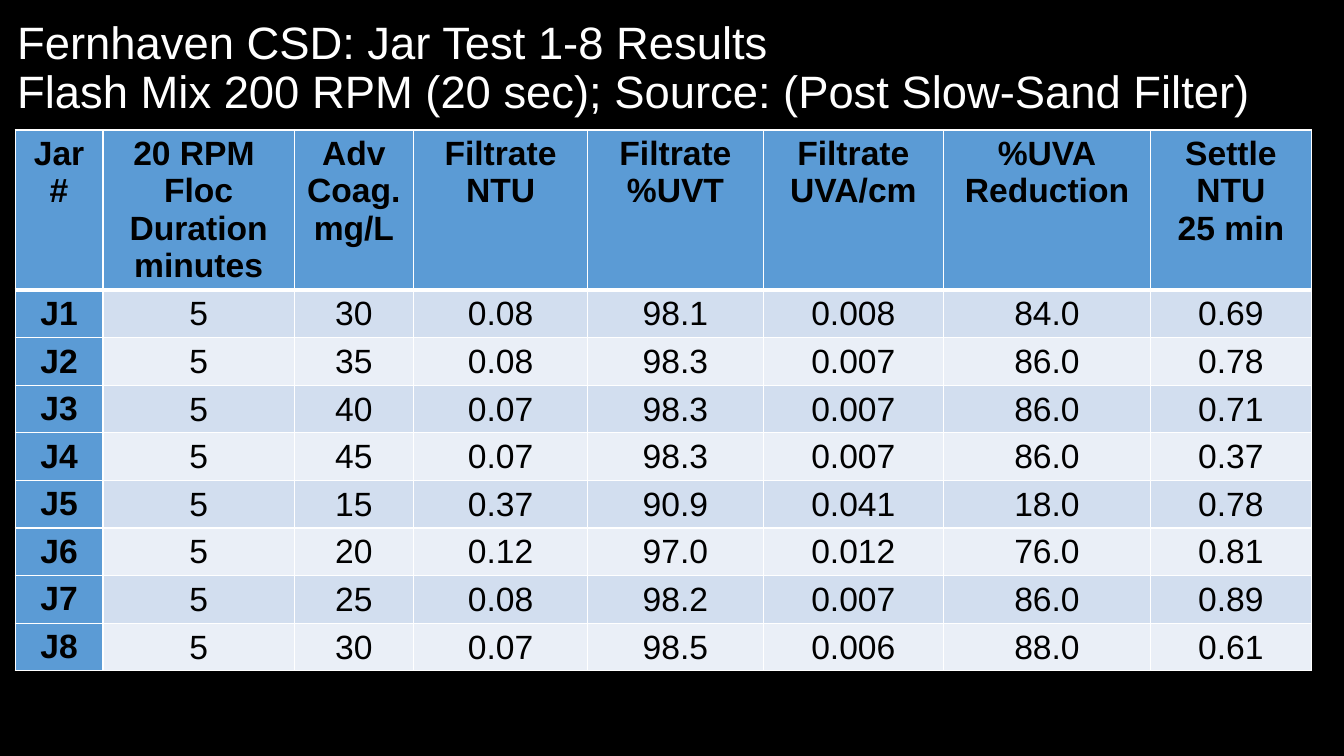
from lxml import etree
from pptx import Presentation
from pptx.dml.color import RGBColor
from pptx.enum.text import MSO_ANCHOR, MSO_AUTO_SIZE, PP_ALIGN
from pptx.oxml.ns import qn
from pptx.util import Inches, Pt

LEFT, CENTER = PP_ALIGN.LEFT, PP_ALIGN.CENTER
TOP, MIDDLE = MSO_ANCHOR.TOP, MSO_ANCHOR.MIDDLE
NO_AUTOFIT = MSO_AUTO_SIZE.NONE
TITLE_ONLY = 5

COLORS = {
    "background": "000000",
    "title": "FFFFFF",
    "text": "000000",
    "border": "FFFFFF",
    "header": "5B9BD5",
    "odd_row": "D2DEEF",
    "even_row": "EAEFF7",
}

TITLE = ("Fernhaven CSD: Jar Test 1-8 Results \v"
         "Flash Mix 200 RPM (20 sec); Source: (Post Slow-Sand Filter)")

HEADINGS = [
    "Jar\n#", "20 RPM \nFloc\nDuration\nminutes", "Adv\nCoag.\nmg/L",
    "Filtrate\nNTU", "Filtrate\n%UVT", "Filtrate\nUVA/cm",
    "%UVA\nReduction", "Settle\nNTU\n25 min",
]
JAR_RESULTS = [
    ["J1", "5", "30", "0.08", "98.1", "0.008", "84.0", "0.69"],
    ["J2", "5", "35", "0.08", "98.3", "0.007", "86.0", "0.78"],
    ["J3", "5", "40", "0.07", "98.3", "0.007", "86.0", "0.71"],
    ["J4", "5", "45", "0.07", "98.3", "0.007", "86.0", "0.37"],
    ["J5", "5", "15", "0.37", "90.9", "0.041", "18.0", "0.78"],
    ["J6", "5", "20", "0.12", "97.0", "0.012", "76.0", "0.81"],
    ["J7", "5", "25", "0.08", "98.2", "0.007", "86.0", "0.89"],
    ["J8", "5", "30", "0.07", "98.5", "0.006", "88.0", "0.61"],
]

# Percent of the slide's width and height
COLUMN_WIDTHS = [6.53, 14.25, 8.85, 12.98, 13.05, 13.43, 15.38, 12]
HEADER_HEIGHT, JAR_HEIGHT = 13.87, 5.87


def write_text(frame, text, size=24, color="text", bold=False, align=CENTER,
               spacing=None, font="Arial"):
    """Fill the frame with one formatted paragraph per line of text."""
    frame.text = text
    for para in frame.paragraphs:
        para.alignment = align
        para.line_spacing = spacing
        for span in para.runs:
            span.font.name = font
            span.font.size = Pt(size)
            span.font.bold = bold
            span.font.color.rgb = RGBColor.from_string(COLORS[color])


def set_borders(cell, top=1, bottom=1):
    """Draw the four cell borders, widths in points."""
    properties = cell._tc.get_or_add_tcPr()
    widths = {"a:lnL": 1, "a:lnR": 1, "a:lnT": top, "a:lnB": bottom}
    for index, (tag, width) in enumerate(widths.items()):
        line = etree.Element(qn(tag), w=str(Pt(width)))
        fill = etree.SubElement(line, qn("a:solidFill"))
        etree.SubElement(fill, qn("a:srgbClr"), val=COLORS["border"])
        properties.insert(index, line)


class SlideBuilder:
    """Holds the deck and its current page; lengths are percent of the slide."""

    def __init__(self, width, height):
        self.deck = Presentation()
        self.deck.slide_width = Inches(width)
        self.deck.slide_height = Inches(height)
        self.page = self.deck.slides.add_slide(self.deck.slide_layouts[TITLE_ONLY])
        background = self.page.background.fill
        background.solid()
        background.fore_color.rgb = RGBColor.from_string(COLORS["background"])

    def across(self, percent):
        return round(self.deck.slide_width * percent / 100)

    def down(self, percent):
        return round(self.deck.slide_height * percent / 100)

    def title(self, text, left, top, width, height):
        box = self.page.shapes.title
        box.left, box.top = self.across(left), self.down(top)
        box.width, box.height = self.across(width), self.down(height)
        frame = box.text_frame
        frame.word_wrap = True
        frame.auto_size = NO_AUTOFIT
        frame.vertical_anchor = MIDDLE
        write_text(frame, text, size=32.4, color="title", align=LEFT, spacing=0.9)

    def table(self, rows, left, top, widths, heights):
        table = self.page.shapes.add_table(
            len(rows), len(widths), self.across(left), self.down(top),
            self.across(sum(widths)), self.down(sum(heights))).table
        for column, width in zip(table.columns, widths):
            column.width = self.across(width)
        for row, height in zip(table.rows, heights):
            row.height = self.down(height)
        table.first_col = True
        for row_index, values in enumerate(rows):
            for column_index, value in enumerate(values):
                self.cell(table.cell(row_index, column_index), value,
                          row_index, column_index)

    def cell(self, cell, value, row_index, column_index):
        heading = row_index == 0 or column_index == 0
        if heading:
            color = "header"
            cell.vertical_anchor = TOP
        else:
            color = "odd_row" if row_index % 2 else "even_row"
            cell.vertical_anchor = MIDDLE
            cell.margin_left = cell.margin_right = cell.margin_top = Inches(0.01)
            cell.margin_bottom = 0
        write_text(cell.text_frame, value, bold=heading)
        cell.fill.solid()
        cell.fill.fore_color.rgb = RGBColor.from_string(COLORS[color])
        set_borders(cell, top=3 if row_index == 1 else 1,
                    bottom=3 if row_index == 0 else 1)


def main():
    builder = SlideBuilder(13.33, 7.5)
    builder.title(TITLE, left=0.53, top=1.6, width=97.75, height=15.2)
    builder.table([HEADINGS] + JAR_RESULTS, left=1.13, top=17.2,
                  widths=COLUMN_WIDTHS,
                  heights=[HEADER_HEIGHT] + [JAR_HEIGHT] * len(JAR_RESULTS))
    builder.deck.save("out.pptx")


if __name__ == "__main__":
    main()
